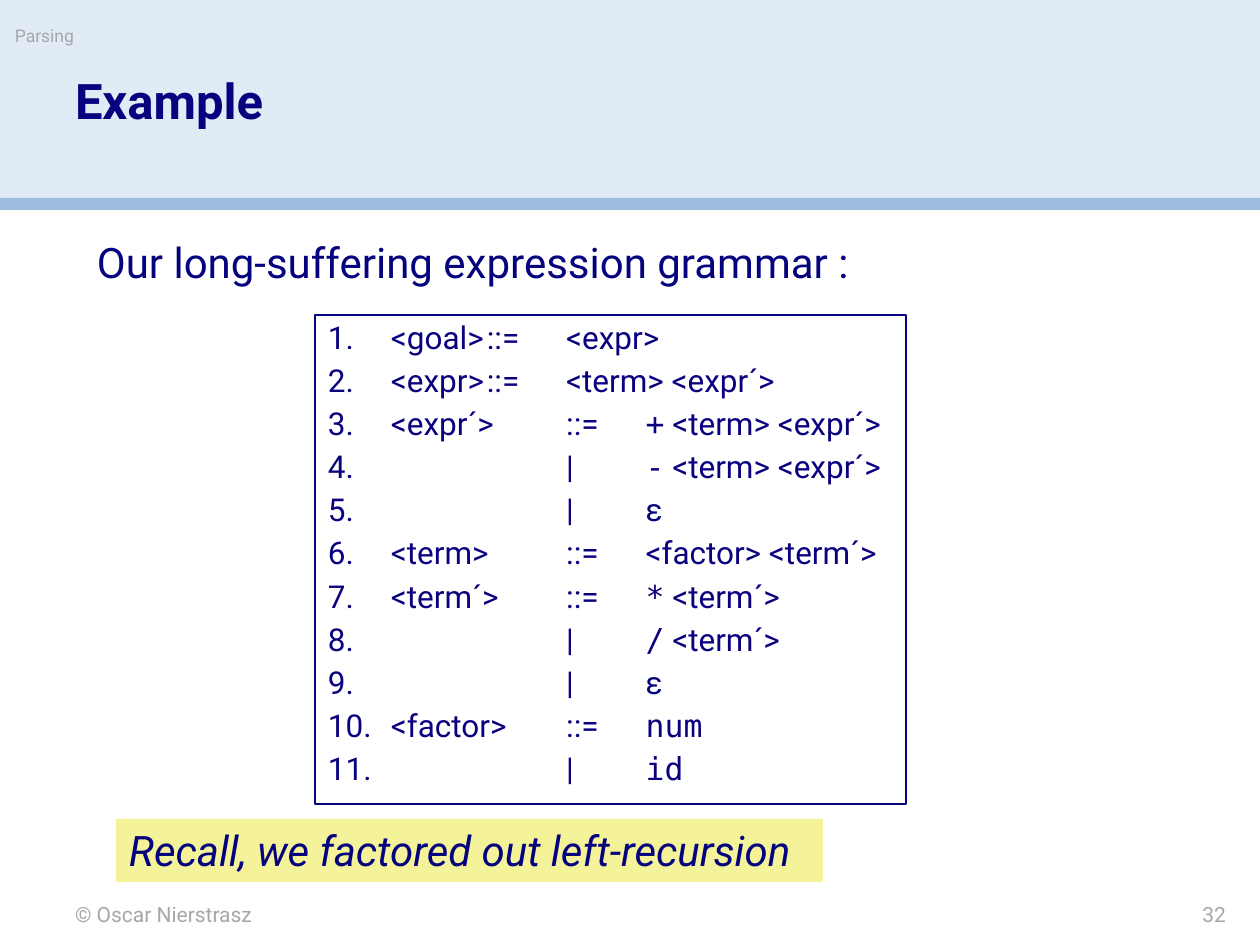
from pptx import Presentation
from pptx.dml.color import RGBColor
from pptx.enum.shapes import MSO_SHAPE
from pptx.enum.text import MSO_ANCHOR, PP_ALIGN
from pptx.oxml.ns import qn
from pptx.util import Emu, Pt
from lxml import etree

RECT = MSO_SHAPE.RECTANGLE
TOP = MSO_ANCHOR.TOP
LEFT, RIGHT = PP_ALIGN.LEFT, PP_ALIGN.RIGHT

NAVY = RGBColor(0x0A, 0x01, 0x7F)
INK = RGBColor(0x05, 0x02, 0x7D)
GRAY = RGBColor(0xA7, 0xA7, 0xA7)
PALE = RGBColor(0xE1, 0xEB, 0xF5)
BLUE = RGBColor(0x9C, 0xBD, 0xDE)
YELLOW = RGBColor(0xF5, 0xF3, 0x99)

SANS, MONO = "Roboto", "DejaVu Sans Mono"
WIDE, HIGH = 1260, 945
PAD_X, PAD_Y = 13, 6

# Each rule: left side, tabs before the sign, sign, monospaced part, the rest
RULES = [
    ("<goal>", 1, "::=", "", "<expr>"),
    ("<expr>", 1, "::=", "", "<term> <expr´>"),
    ("<expr´>", 1, "::=", "+", " <term> <expr´>"),
    ("", 3, "|", "-", " <term> <expr´>"),
    ("", 3, "|", "", "ε"),
    ("<term>", 1, "::=", "", "<factor> <term´>"),
    ("<term´>", 1, "::=", "*", " <term´>"),
    ("", 3, "|", "/", " <term´>"),
    ("", 3, "|", "", "ε"),
    ("<factor>", 1, "::=", "num", ""),
    ("", 3, "|", "id", ""),
]


def px(n):
    return Emu(round(n * 914400 / 126))


def add_run(para, text, size=18, color=NAVY, font=SANS, bold=False, italic=False):
    run = para.add_run()
    run.text = text
    face = run.font
    face.name, face.size = font, Pt(size)
    face.bold, face.italic = bold, italic
    face.color.rgb = color


def set_frame(shape, pad=True):
    frame = shape.text_frame
    frame.word_wrap = True
    frame.vertical_anchor = TOP
    frame.margin_left = frame.margin_right = px(PAD_X if pad else 0)
    frame.margin_top = frame.margin_bottom = px(PAD_Y if pad else 0)
    return frame


def add_rect(slide, box, fill=None, line=None):
    shape = slide.shapes.add_shape(RECT, *map(px, box))
    shape.shadow.inherit = False
    if fill is None:
        shape.fill.background()
    else:
        shape.fill.solid()
        shape.fill.fore_color.rgb = fill
    if line is None:
        shape.line.fill.background()
    else:
        shape.line.color.rgb = line
        shape.line.width = Pt(0.75)
    return shape


def add_text(slide, box, text, pad=False, fill=None, align=LEFT, space=1.0, **style):
    if fill is None:
        shape = slide.shapes.add_textbox(*map(px, box))
    else:
        shape = add_rect(slide, box, fill)
    para = set_frame(shape, pad).paragraphs[0]
    para.alignment, para.line_spacing = align, space
    add_run(para, text, **style)


def add_head(slide, box):
    x, y, w, h = box
    add_rect(slide, (x, y, w, h - 11), PALE)
    add_rect(slide, (x, y + h - 12, w, 12), BLUE)
    add_text(slide, (x + 15, y + 25, 743, 35), "Parsing", size=10, color=GRAY)
    add_text(slide, (x + 75, y + 77, 1113, 112), "Example",
             size=28, bold=True, space=0.9)


def set_number(para):
    """Number the paragraph, with a hanging indent and even tab stops."""
    props = para._p.get_or_add_pPr()
    props.set("marL", str(px(63)))
    props.set("indent", str(-px(63)))
    props.set("defTabSz", "576263")
    etree.SubElement(props, qn("a:buFont"), typeface="+mj-lt")
    etree.SubElement(props, qn("a:buAutoNum"), type="arabicPeriod")


def add_rules(slide, box):
    frame = set_frame(add_rect(slide, box, line=INK))
    for i, (name, tabs, sign, code, rest) in enumerate(RULES):
        para = frame.add_paragraph() if i else frame.paragraphs[0]
        para.alignment, para.line_spacing = LEFT, 0.95
        para.space_before = Pt(4.1)
        set_number(para)
        add_run(para, name + "\t" * tabs + sign + "\t")
        if code:
            add_run(para, code, font=MONO)
        if rest:
            add_run(para, rest, color=INK if rest == "ε" else NAVY)


def add_body(slide, box):
    x, y, w, h = box
    add_text(slide, (x + 84, y + 21, 780, 63),
             "Our long-suffering expression grammar :",
             pad=True, size=24, color=INK)
    add_rules(slide, (x + 315, y + 105, 591, 489))
    add_text(slide, (x + 116, y + 609, 707, 63),
             "Recall, we factored out left-recursion",
             pad=True, fill=YELLOW, size=24, color=INK, italic=True)


def add_foot(slide, box):
    x, y, w, h = box
    add_text(slide, (x + 75, y, 525, h), "© Oscar Nierstrasz", size=12, color=GRAY)
    add_text(slide, (x + w - 220, y, 186, h), "32",
             align=RIGHT, size=12, color=GRAY)


def main():
    deck = Presentation()
    deck.slide_width, deck.slide_height = px(WIDE), px(HIGH)
    slide = deck.slides.add_slide(deck.slide_layouts[6])
    add_head(slide, (0, 0, WIDE, 210))
    add_body(slide, (0, 210, WIDE, 692))
    add_foot(slide, (0, 902, WIDE, 25))
    deck.save("out.pptx")


if __name__ == "__main__":
    main()
